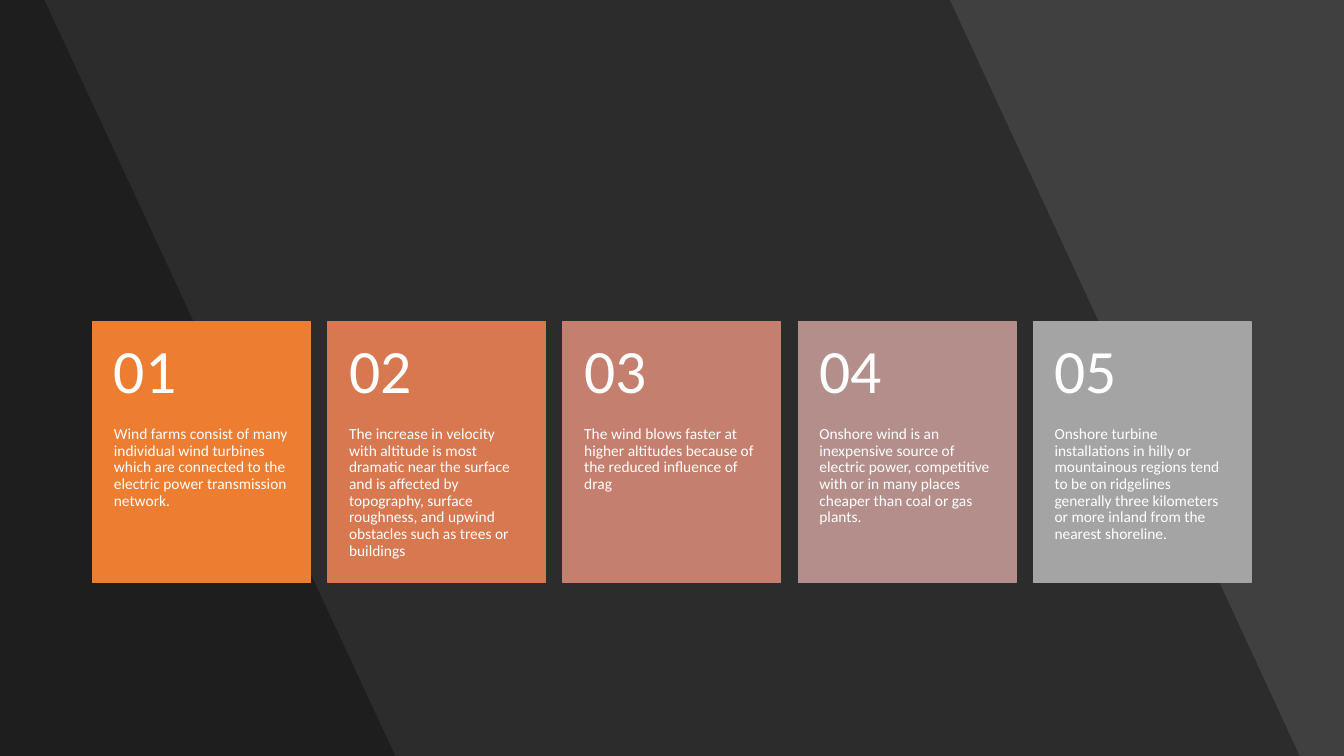
from lxml import etree
from pptx import Presentation
from pptx import util as u
from pptx.dml.color import RGBColor
from pptx.enum import shapes, text
from pptx.oxml.ns import qn

WHITE = RGBColor(0xFF, 0xFF, 0xFF)
BLACK = RGBColor(0, 0, 0)
CHARCOAL = RGBColor(0x40, 0x40, 0x40)
ORANGE = RGBColor(0xED, 0x7D, 0x31)
TERRACOTTA = RGBColor(0xD7, 0x78, 0x50)
CLAY = RGBColor(0xC4, 0x7F, 0x6E)
MAUVE = RGBColor(0xB3, 0x8E, 0x8A)
GRAY = RGBColor(0xA4, 0xA4, 0xA4)

CARDS = [
    (ORANGE, "Wind farms consist of many individual wind turbines which are "
             "connected to the electric power transmission network."),
    (TERRACOTTA, "The increase in velocity with altitude is most dramatic near the "
                 "surface and is affected by topography, surface roughness, and "
                 "upwind obstacles such as trees or buildings"),
    (CLAY, "The wind blows faster at higher altitudes because of the reduced "
           "influence of drag"),
    (MAUVE, "Onshore wind is an inexpensive source of electric power, competitive "
            "with or in many places cheaper than coal or gas plants."),
    (GRAY, "Onshore turbine installations in hilly or mountainous regions tend to "
           "be on ridgelines generally three kilometers or more inland from the "
           "nearest shoreline."),
]

PX = u.Inches(1) // 100
PAGE_W, PAGE_H = 1333, 750
BAND_EDGES = [(942, 1289), (44, 392)]  # right edge at top and at bottom
FIRST_LEFT, LAST_LEFT, CARD_TOP = 92, 1025, 319
CARD_W, CARD_H, NUMBER_H = 216, 259, 104


def px(*lengths):
    return [round(length * PX) for length in lengths]


def add_band(page, top_edge, bottom_edge):
    """Darken the page left of a slanted edge."""
    builder = page.shapes.build_freeform(0, 0, scale=PX)
    builder.add_line_segments(
        [(top_edge, 0), (bottom_edge, PAGE_H), (0, PAGE_H)], close=True)
    band = builder.convert_to_shape()
    band.shadow.inherit = False
    band.fill.solid()
    band.fill.fore_color.rgb = BLACK
    band.line.fill.background()
    color = band.fill._xPr.find(qn("a:solidFill"))[0]
    etree.SubElement(color, qn("a:alpha")).set("val", "30000")


def add_card(page, left, color):
    card = page.shapes.add_shape(
        shapes.MSO_SHAPE.RECTANGLE, *px(left, CARD_TOP, CARD_W, CARD_H))
    card.shadow.inherit = False
    card.fill.solid()
    card.fill.fore_color.rgb = color
    card.line.color.rgb = color
    card.line.width = u.Pt(1)


def add_text(page, words, left, top, width, height, *, size, insets,
             anchor=text.MSO_ANCHOR.TOP):
    box = page.shapes.add_textbox(*px(left, top, width, height))
    frame = box.text_frame
    frame.word_wrap = True
    frame.vertical_anchor = anchor
    (frame.margin_left, frame.margin_top,
     frame.margin_right, frame.margin_bottom) = px(*insets)
    para = frame.paragraphs[0]
    para.line_spacing = 0.9
    span = para.add_run()
    span.text = words
    span.font.name = "Calibri"
    span.font.size = u.Pt(size)
    span.font.color.rgb = WHITE


def main():
    deck = Presentation()
    deck.slide_width, deck.slide_height = px(PAGE_W, PAGE_H)
    page = deck.slides.add_slide(deck.slide_layouts.get_by_name("Blank"))
    page.background.fill.solid()
    page.background.fill.fore_color.rgb = CHARCOAL

    for edges in BAND_EDGES:
        add_band(page, *edges)

    pitch = (LAST_LEFT - FIRST_LEFT) / (len(CARDS) - 1)
    for index, (color, words) in enumerate(CARDS):
        left = FIRST_LEFT + index * pitch
        add_card(page, left, color)
        add_text(page, words, left, CARD_TOP + NUMBER_H, CARD_W,
                 CARD_H - NUMBER_H, size=11, insets=(21, 0, 21, 36))
        add_text(page, f"{index + 1:02}", left, CARD_TOP, CARD_W, NUMBER_H,
                 size=44, insets=(21, 18, 21, 18),
                 anchor=text.MSO_ANCHOR.MIDDLE)

    deck.save("out.pptx")


if __name__ == "__main__":
    main()
